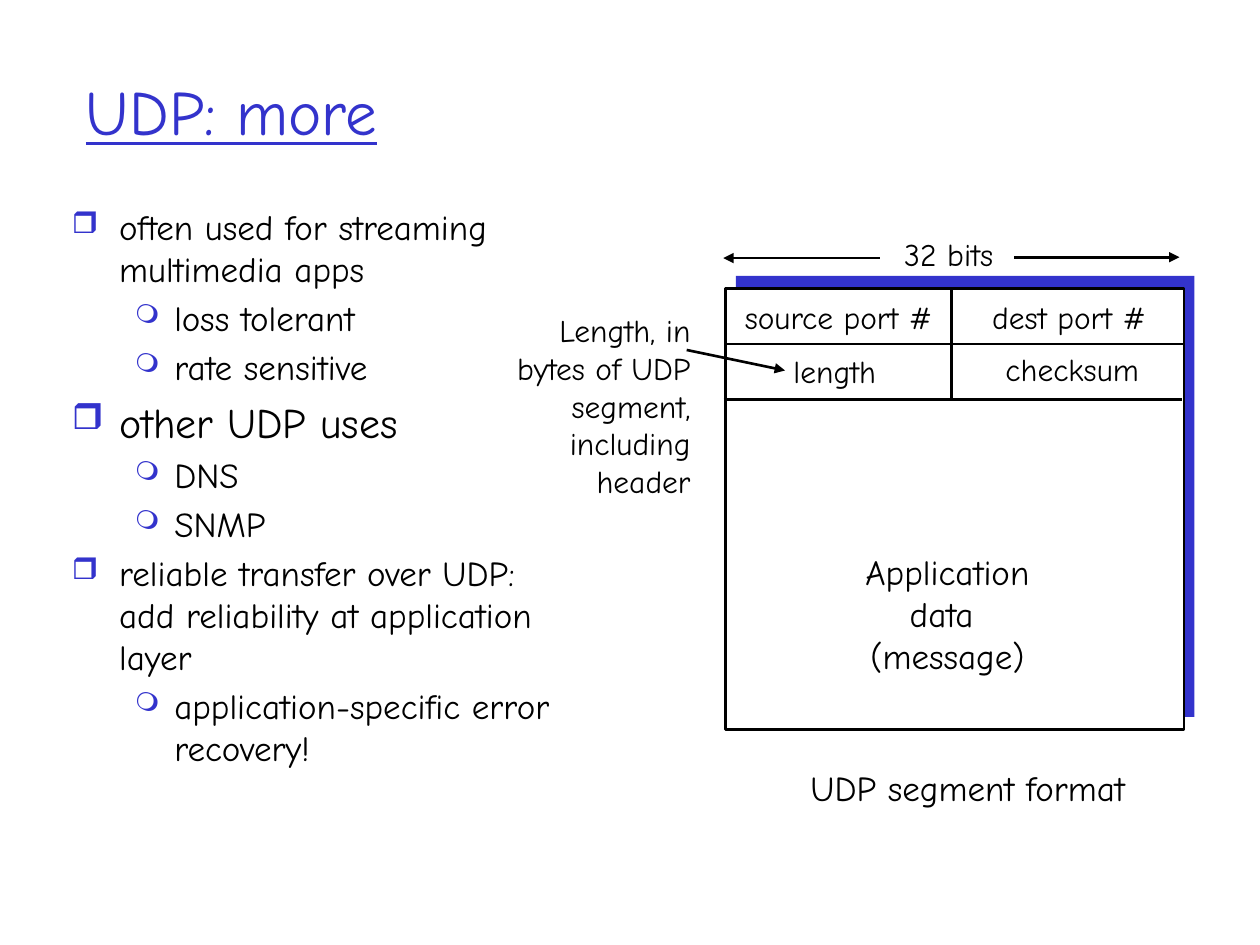
"""Build the slide on UDP uses and the UDP segment format."""
from typing import NamedTuple

from lxml import etree
from pptx import Presentation
from pptx import util as u
from pptx.dml.color import RGBColor
from pptx.enum import shapes, text
from pptx.oxml import ns

FONT = "Comic Neue"
BLUE, BLACK, WHITE = "3333CC", "000000", "FFFFFF"
CENTER, RIGHT, LEFT = text.PP_ALIGN.CENTER, text.PP_ALIGN.RIGHT, text.PP_ALIGN.LEFT


class Label(NamedTuple):
    lines: tuple
    left: float
    top: float
    width: float
    height: float
    size: float = 18
    align: text.PP_ALIGN = CENTER
    color: str = BLACK
    wrap: bool = False


class Line(NamedTuple):
    x1: float
    y1: float
    x2: float
    y2: float
    arrow: bool = False


class BulletStyle(NamedTuple):
    symbol: str
    percent: int
    margin: float
    hanging: float


class Bullet(NamedTuple):
    wording: str
    level: int = 0
    size: float = 20


BULLET_STYLES = (BulletStyle("❒", 85, 27, 27), BulletStyle("❍", 75, 58.5, 22.5))

BULLETS = (
    Bullet("often used for streaming multimedia apps"),
    Bullet("loss tolerant", 1),
    Bullet("rate sensitive", 1),
    Bullet("other UDP uses", size=24),
    Bullet("DNS", 1),
    Bullet("SNMP", 1),
    Bullet("reliable transfer over UDP: add reliability at application layer"),
    Bullet("application-specific error recovery!", 1),
)

TITLE = Label(("UDP: more",), 42, 18, 656.5, 90, 36, LEFT, BLUE, True)
USES = Label(tuple(b.wording for b in BULLETS), 34, 114, 300, 366, 20, LEFT, BLACK, True)

SEGMENT_LEFT, SEGMENT_TOP, SEGMENT_WIDTH, SEGMENT_HEIGHT = 414.5, 165, 262, 252
SEGMENT_RIGHT = SEGMENT_LEFT + SEGMENT_WIDTH
ROW_1, ROW_2 = 196.6, 228.2
MIDDLE = 543.6

SEGMENT_LABELS = (
    Label(("source port #",), 413.3, 167, 131.8, 29),
    Label(("dest port #",), 553.7, 167, 114.5, 29),
    Label(("length",), 443.5, 197.5, 67, 29),
    Label(("checksum",), 565.2, 196.6, 95, 29),
    Label(("32 bits",), 504.7, 131, 74.9, 29),
    Label(("Application", "data ", "(message)"), 482.4, 311, 118, 79.2, 20),
    Label(("UDP segment format",), 448.6, 434.2, 208.8, 31, 20),
    Label(("Length, in", "bytes of UDP", "segment,", "including", "header"),
          275, 174.2, 126.7, 115.2, 18, RIGHT),
)

SEGMENT_LINES = (
    Line(SEGMENT_LEFT, ROW_1, SEGMENT_RIGHT, ROW_1),
    Line(SEGMENT_LEFT - 1, ROW_2, SEGMENT_RIGHT - 1, ROW_2),
    Line(MIDDLE, ROW_2, MIDDLE, SEGMENT_TOP),
    Line(579.6, 147, 674, 147, True),
    Line(502.6, 147.5, 413.3, 147.5, True),
    Line(392.4, 200, 448.6, 211.7, True),
)


def rgb(code: str) -> RGBColor:
    return RGBColor.from_string(code)


def add_label(slide, label: Label, anchor=text.MSO_ANCHOR.TOP):
    box = slide.shapes.add_textbox(*map(u.Pt, label[1:5]))
    frame = box.text_frame
    frame.word_wrap = label.wrap
    frame.vertical_anchor = anchor
    frame.text = "\n".join(label.lines)
    for paragraph in frame.paragraphs:
        paragraph.alignment = label.align
    return frame


def set_font(paragraph, size: float, color: str) -> None:
    font = paragraph.font
    font.name, font.size = FONT, u.Pt(size)
    font.color.rgb = rgb(color)


def add_plain_label(slide, label: Label, anchor=text.MSO_ANCHOR.TOP):
    frame = add_label(slide, label, anchor)
    for paragraph in frame.paragraphs:
        set_font(paragraph, label.size, label.color)
    return frame


def set_bullet(paragraph, style: BulletStyle) -> None:
    properties = paragraph._p.get_or_add_pPr()
    properties.set("marL", str(u.Pt(style.margin)))
    properties.set("indent", str(-u.Pt(style.hanging)))
    color = etree.SubElement(properties, ns.qn("a:buClr"))
    etree.SubElement(color, ns.qn("a:srgbClr"), val=BLUE)
    etree.SubElement(properties, ns.qn("a:buSzPct"), val=str(style.percent * 1000))
    etree.SubElement(properties, ns.qn("a:buChar"), char=style.symbol)


def add_uses(slide) -> None:
    frame = add_label(slide, USES)
    for index, (paragraph, bullet) in enumerate(zip(frame.paragraphs, BULLETS)):
        paragraph.level = bullet.level
        set_bullet(paragraph, BULLET_STYLES[bullet.level])
        if index:
            paragraph.space_before = u.Pt(bullet.size * 0.2)
        set_font(paragraph, bullet.size, BLACK)


def add_block(slide, left: float, top: float, fill: str, outlined: bool) -> None:
    block = slide.shapes.add_shape(
        shapes.MSO_SHAPE.RECTANGLE,
        *map(u.Pt, (left, top, SEGMENT_WIDTH, SEGMENT_HEIGHT)))
    block.shadow.inherit = False
    block.fill.solid()
    block.fill.fore_color.rgb = rgb(fill)
    if outlined:
        block.line.color.rgb = rgb(BLACK)
        block.line.width = u.Pt(1.5)
    else:
        block.line.fill.background()


def add_line(slide, line: Line) -> None:
    connector = slide.shapes.add_connector(
        shapes.MSO_CONNECTOR.STRAIGHT, *map(u.Pt, line[:4]))
    connector.line.color.rgb = rgb(BLACK)
    connector.line.width = u.Pt(1.5)
    if line.arrow:
        etree.SubElement(connector.line._get_or_add_ln(), ns.qn("a:tailEnd"), type="triangle")
    etree.SubElement(connector._element.spPr, ns.qn("a:effectLst"))


def main() -> None:
    deck = Presentation()
    deck.slide_width, deck.slide_height = u.Pt(720), u.Pt(540)
    slide = deck.slides.add_slide(deck.slide_layouts[6])
    title = add_plain_label(slide, TITLE, text.MSO_ANCHOR.MIDDLE)
    title.paragraphs[0].font.underline = True
    add_uses(slide)
    add_block(slide, SEGMENT_LEFT + 6, SEGMENT_TOP - 7.3, BLUE, False)
    add_block(slide, SEGMENT_LEFT, SEGMENT_TOP, WHITE, True)
    for label in SEGMENT_LABELS:
        add_plain_label(slide, label)
    for line in SEGMENT_LINES:
        add_line(slide, line)
    deck.save("out.pptx")


if __name__ == "__main__":
    main()
